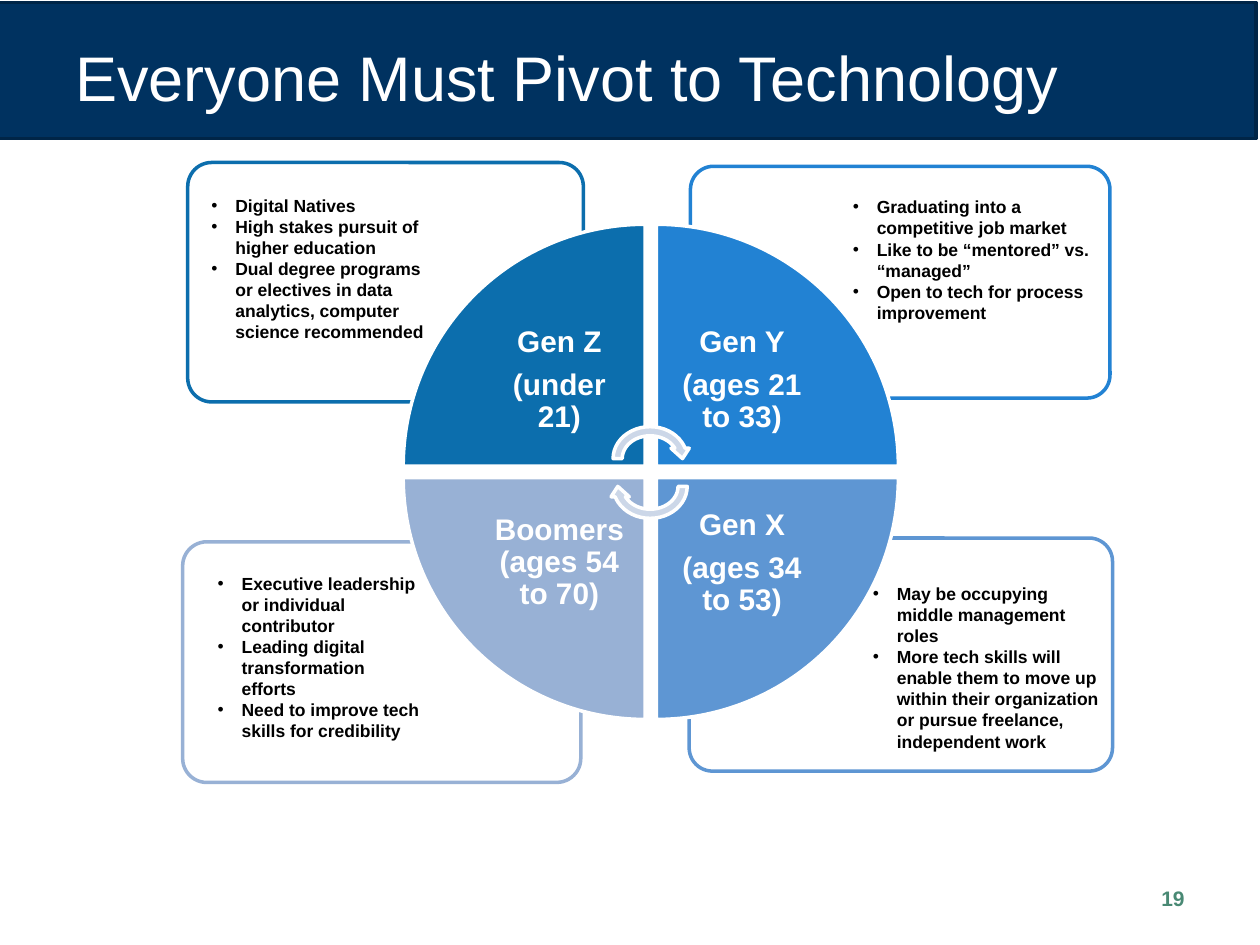
from lxml import etree
from pptx import Presentation
from pptx.dml.color import RGBColor
from pptx.enum import shapes, text
from pptx.oxml.ns import qn
from pptx.util import Inches, Pt

COLORS = {
    "banner": "003260", "banner_edge": "002547", "white": "FFFFFF",
    "black": "000000", "number": "498974", "arrow": "CCD7E8",
    "gen_z": "0C6EAD", "gen_y": "2282D3", "gen_x": "5E96D3", "boomers": "98B1D5",
}
TITLE = "Everyone Must Pivot to Technology"
PAGE_NUMBER = "19"
GENERATIONS = [
    {"color": "gen_z", "column": 0, "row": 0, "rotation": 0,
     "label": ["Gen Z", "(under 21)"],
     "card": (1.49, 1.29, 3.14, 1.9), "notes_box": (1.58, 1.5, 1.88, 1.28),
     "notes": ["Digital Natives", "High stakes pursuit of higher education",
               "Dual degree programs or electives in data analytics, "
               "computer science recommended"]},
    {"color": "gen_y", "column": 1, "row": 0, "rotation": 90,
     "label": ["Gen Y", "(ages 21 to 33)"],
     "card": (5.48, 1.32, 3.33, 1.84), "notes_box": (6.67, 1.51, 2.08, 1.28),
     "notes": ["Graduating into a competitive job market",
               "Like to be “mentored” vs. “managed”",
               "Open to tech for process improvement"]},
    {"color": "gen_x", "column": 1, "row": 1, "rotation": 180,
     "label": ["Gen X", "(ages 34 to 53)"],
     "card": (5.47, 4.27, 3.36, 1.85), "notes_box": (6.83, 4.58, 2, 1.45),
     "notes": ["May be occupying middle management roles",
               "More tech skills will enable them to move up within their "
               "organization or pursue freelance, independent work"]},
    {"color": "boomers", "column": 0, "row": 1, "rotation": 270,
     "label": ["Boomers (ages 54 to 70)"],
     "card": (1.45, 4.3, 3.16, 1.91), "notes_box": (1.63, 4.5, 1.83, 1.62),
     "notes": ["Executive leadership or individual contributor",
               "Leading digital transformation efforts",
               "Need to improve tech skills for credibility"]},
]
WHEEL_LEFT, WHEEL_TOP = 3.2, 1.78
WEDGE, WEDGE_STEP, LABEL = 1.92, 2.01, 1.36
ARROWS = [(3.35, 0), (3.57, 180)]


def color(name):
    return RGBColor.from_string(COLORS[name])


def add_shape(slide, kind, box, fill, line, rotation=0):
    shape = slide.shapes.add_shape(kind, *map(Inches, box))
    shape.shadow.inherit = False
    shape.fill.solid()
    shape.fill.fore_color.rgb = color(fill)
    shape.line.color.rgb = color(line)
    shape.line.width = Pt(2)
    shape.rotation = rotation
    return shape


def add_text(slide, box, lines, size, fill, bold=True, align=text.PP_ALIGN.LEFT,
             anchor=text.MSO_ANCHOR.MIDDLE, bullets=False):
    frame = slide.shapes.add_textbox(*map(Inches, box)).text_frame
    frame.word_wrap = True
    frame.vertical_anchor = anchor
    frame.text = "\n".join(lines)
    for paragraph in frame.paragraphs:
        paragraph.alignment = align
        if bullets:
            properties = paragraph._p.get_or_add_pPr()
            properties.set("marL", str(Inches(0.19)))
            properties.set("indent", str(Inches(-0.19)))
            etree.SubElement(properties, qn("a:buFont"), typeface="Arial")
            etree.SubElement(properties, qn("a:buChar"), char="•")
        font = paragraph.font
        font.name, font.size, font.bold = "Arial", Pt(size), bold
        font.color.rgb = color(fill)
    return frame


def add_card(slide, generation):
    card = add_shape(slide, shapes.MSO_SHAPE.ROUNDED_RECTANGLE,
                     generation["card"], "white", generation["color"])
    card.adjustments[0] = 0.1
    fill_color = card._element.spPr.find(qn("a:solidFill"))[0]
    etree.SubElement(fill_color, qn("a:alpha"), val="90000")


def add_wedge(slide, generation):
    column, row = generation["column"], generation["row"]
    left = WHEEL_LEFT + column * WEDGE_STEP
    top = WHEEL_TOP + row * WEDGE_STEP
    add_shape(slide, shapes.MSO_SHAPE.PIE_WEDGE, (left, top, WEDGE, WEDGE),
              generation["color"], "white", generation["rotation"])
    inset = WEDGE - LABEL
    label_box = (left + inset * (1 - column), top + inset * (1 - row), LABEL, LABEL)
    frame = add_text(slide, label_box, generation["label"], 17, "white",
                     align=text.PP_ALIGN.CENTER)
    frame.margin_left = frame.margin_right = Inches(0.13)
    frame.margin_top = frame.margin_bottom = Inches(0.13)
    for paragraph in frame.paragraphs:
        paragraph.line_spacing = 0.9
        paragraph.space_after = Pt(6)


def main():
    presentation = Presentation()
    presentation.slide_width, presentation.slide_height = Inches(10), Inches(7.5)
    slide = presentation.slides.add_slide(presentation.slide_layouts[6])

    add_shape(slide, shapes.MSO_SHAPE.RECTANGLE, (-0.03, 0.02, 10, 1.08),
              "banner", "banner_edge")
    add_text(slide, (0.5, 0.13, 9, 0.95), [TITLE], 36, "white", bold=False)
    add_text(slide, (7.92, 6.92, 1.58, 0.42), [PAGE_NUMBER], 12, "number",
             align=text.PP_ALIGN.RIGHT)

    for generation in reversed(GENERATIONS):
        add_card(slide, generation)
    for generation in GENERATIONS:
        add_wedge(slide, generation)
    for top, rotation in ARROWS:
        add_shape(slide, shapes.MSO_SHAPE.CIRCULAR_ARROW, (4.83, top, 0.66, 0.58),
                  "arrow", "white", rotation)
    for generation in GENERATIONS:
        add_text(slide, generation["notes_box"], generation["notes"], 10, "black",
                 anchor=text.MSO_ANCHOR.TOP, bullets=True)

    presentation.save("out.pptx")


if __name__ == "__main__":
    main()
